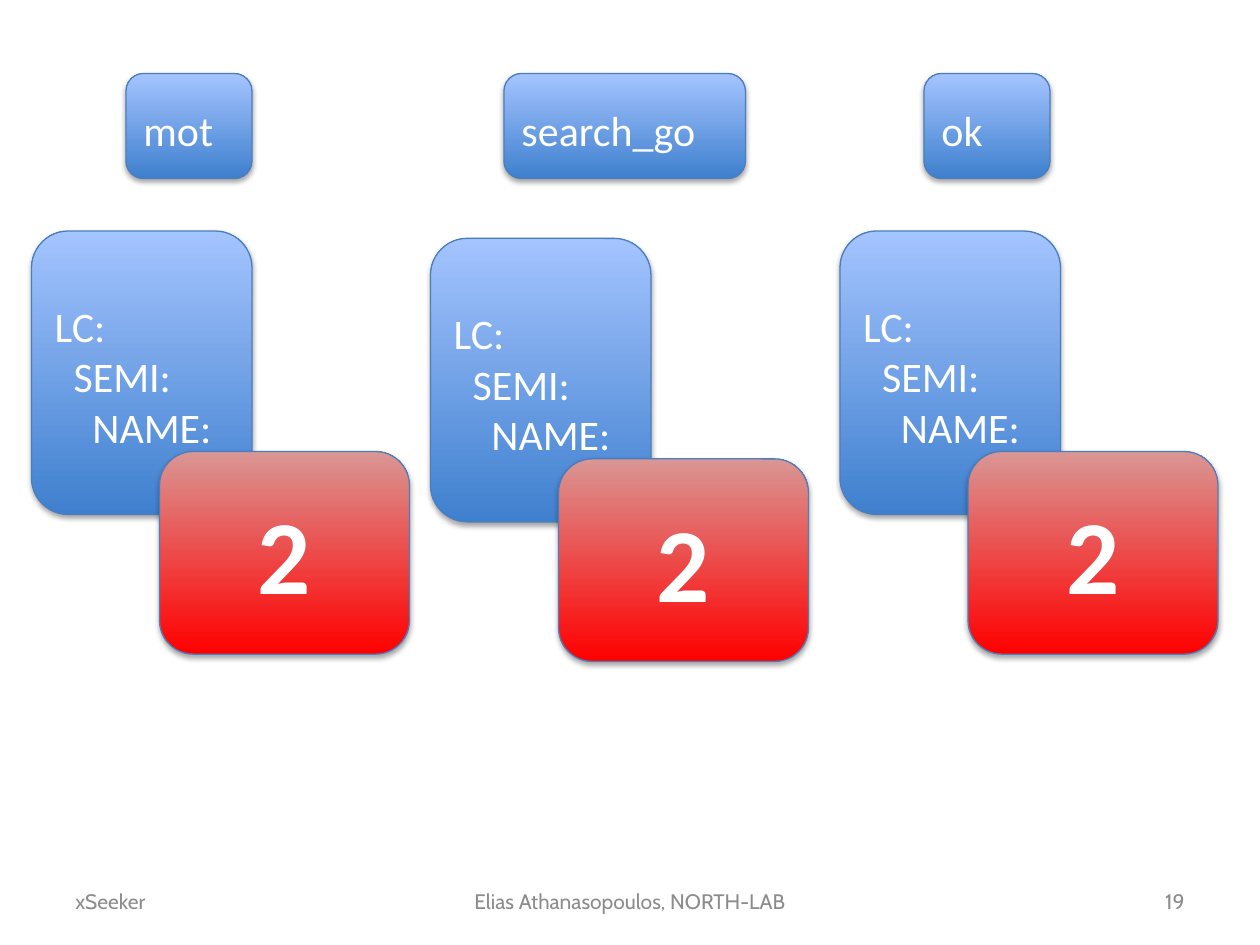
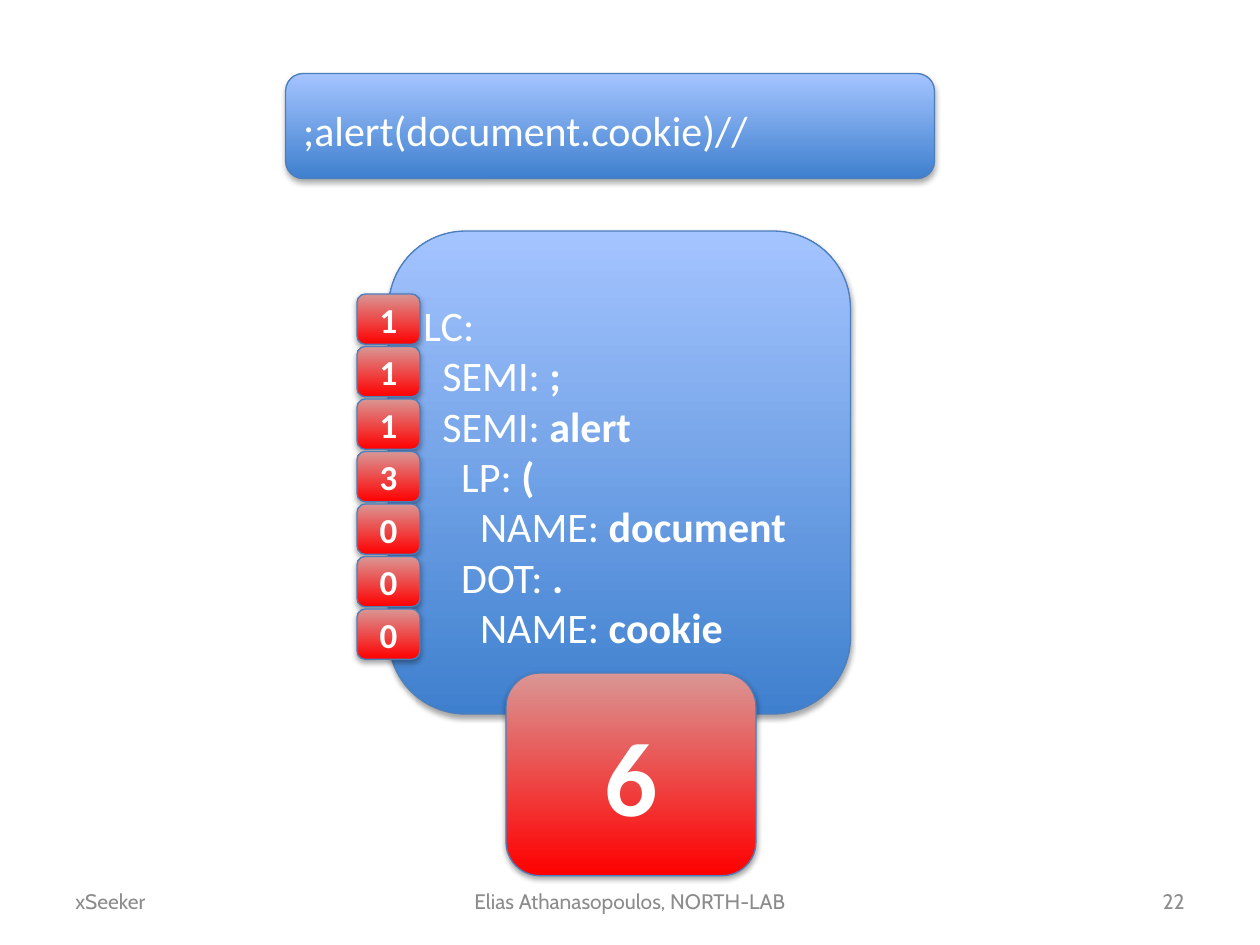
from lxml import etree
from pptx import Presentation
from pptx.dml.color import RGBColor
from pptx.enum.shapes import MSO_SHAPE
from pptx.enum.text import MSO_ANCHOR, PP_ALIGN
from pptx.oxml.ns import qn
from pptx.util import Pt

# Content: tree lines are (indent level, token, value)
STUB = [(0, "LC:", ""), (1, "SEMI:", ""), (2, "NAME:", "")]
TREES = [  # word, word left, word width, tree left, tree top, score
    ("mot", 120, 120, 30, 220, "2"),
    ("search_go", 480, 230, 410, 227, "2"),
    ("ok", 880, 120, 800, 220, "2"),
]
CODE = ";alert(document.cookie)//"
PARSE = [
    (0, "LC:", ""),
    (1, "SEMI: ", ";"),
    (1, "SEMI: ", "alert"),
    (2, "LP: ", "("),
    (3, "NAME: ", "document"),
    (2, "DOT: ", "."),
    (3, "NAME: ", "cookie"),
]
TALLY = ["1", "1", "1", "3", "0", "0", "0"]
TOTAL = "6"
LEFT, MID, RIGHT = PP_ALIGN.LEFT, PP_ALIGN.CENTER, PP_ALIGN.RIGHT
FOOT = [("xSeeker", 60, 280, LEFT),
        ("Elias Athanasopoulos, NORTH-LAB", 410, 380, MID)]
PAGES = ["19", "22"]

# Shared style
PX = 7620  # EMU in one px, 120 px to the inch
ROUND = MSO_SHAPE.ROUNDED_RECTANGLE
MIDDLE = MSO_ANCHOR.MIDDLE
WHITE = RGBColor(0xFF, 0xFF, 0xFF)
GREY = RGBColor(0x8C, 0x8C, 0x8C)
EDGE = RGBColor(0x4B, 0x7E, 0xBC)
BLUE = (RGBColor(0x3F, 0x80, 0xCE), RGBColor(0xA4, 0xC4, 0xFF))
RED = (RGBColor(0xFF, 0x00, 0x00), RGBColor(0xD9, 0x96, 0x94))
WORD_TOP, WORD_H = 70, 100
TREE_W, TREE_H = 210, 270
SCORE_W, SCORE_H = 238, 193
STEP = 18  # tree indent per level


def write(shape, lines, size=24, font="Calibri", color=WHITE, bold=False,
          align=LEFT, wrap=True):
    """Fill a shape with text given as a string or as tree lines."""
    if isinstance(lines, str):
        lines = [(0, lines, "")]
    frame = shape.text_frame
    frame.word_wrap = wrap
    frame.vertical_anchor = MIDDLE
    for i, (level, token, value) in enumerate(lines):
        para = frame.add_paragraph() if i else frame.paragraphs[0]
        para.alignment = align
        if level:
            para._p.get_or_add_pPr().set("marL", str(level * STEP * PX))
        for text, heavy in ((token, bold), (value, True)):
            if text:
                run = para.add_run()
                run.text = text
                run.font.size = Pt(size)
                run.font.name = font
                run.font.bold = heavy
                run.font.color.rgb = color


def shade(shape):
    """Give a shape a soft shadow straight below it."""
    shape.shadow.inherit = False
    effects = shape._element.spPr.find(qn("a:effectLst"))
    outer = etree.SubElement(effects, qn("a:outerShdw"), blurRad="40000",
                             dist="23000", dir="5400000", rotWithShape="0")
    black = etree.SubElement(outer, qn("a:srgbClr"), val="000000")
    etree.SubElement(black, qn("a:alpha"), val="35000")


def card(slide, x, y, w, h, tones):
    """Add a rounded box that fades from the first tone up to the second."""
    shape = slide.shapes.add_shape(ROUND, x * PX, y * PX, w * PX, h * PX)
    shape.fill.gradient()
    shape.fill.gradient_angle = 90
    for stop, tone in zip(shape.fill.gradient_stops, tones):
        stop.color.rgb = tone
    shape.line.color.rgb = EDGE
    shape.line.width = Pt(0.75)
    shade(shape)
    return shape


def blue(slide, x, y, w, h, lines):
    shape = card(slide, x, y, w, h, BLUE)
    shape.text_frame.margin_top = 12 * PX
    write(shape, lines, wrap=False)


def red(slide, x, y, w, h, text, size):
    write(card(slide, x, y, w, h, RED), text, size=size, bold=True, align=MID)


def start(deck, page):
    """Add a blank slide with its footer."""
    slide = deck.slides.add_slide(deck.slide_layouts[6])
    for text, x, w, align in FOOT + [(page, 860, 280, RIGHT)]:
        box = slide.shapes.add_textbox(x * PX, 834 * PX, w * PX, 48 * PX)
        write(box, text, size=12, font="Cabin", color=GREY, align=align)
    return slide


def main():
    deck = Presentation()
    deck.slide_width, deck.slide_height = 1200 * PX, 900 * PX

    # Three harmless words, each with its tree and score
    slide = start(deck, PAGES[0])
    for word, left, width, x, y, score in TREES:
        blue(slide, left, WORD_TOP, width, WORD_H, word)
        blue(slide, x, y, TREE_W, TREE_H, STUB)
        red(slide, x + 122, y + 210, SCORE_W, SCORE_H, score, 60)

    # One injected script, scored line by line
    slide = start(deck, PAGES[1])
    blue(slide, 272, WORD_TOP, 618, WORD_H, CODE)
    blue(slide, 370, 220, 440, 460, PARSE)
    red(slide, 482, 641, SCORE_W, SCORE_H, TOTAL, 60)
    for i, count in enumerate(TALLY):
        red(slide, 340, 280 + 50 * i, 60, 48, count, 20)

    deck.save("out.pptx")


if __name__ == "__main__":
    main()
